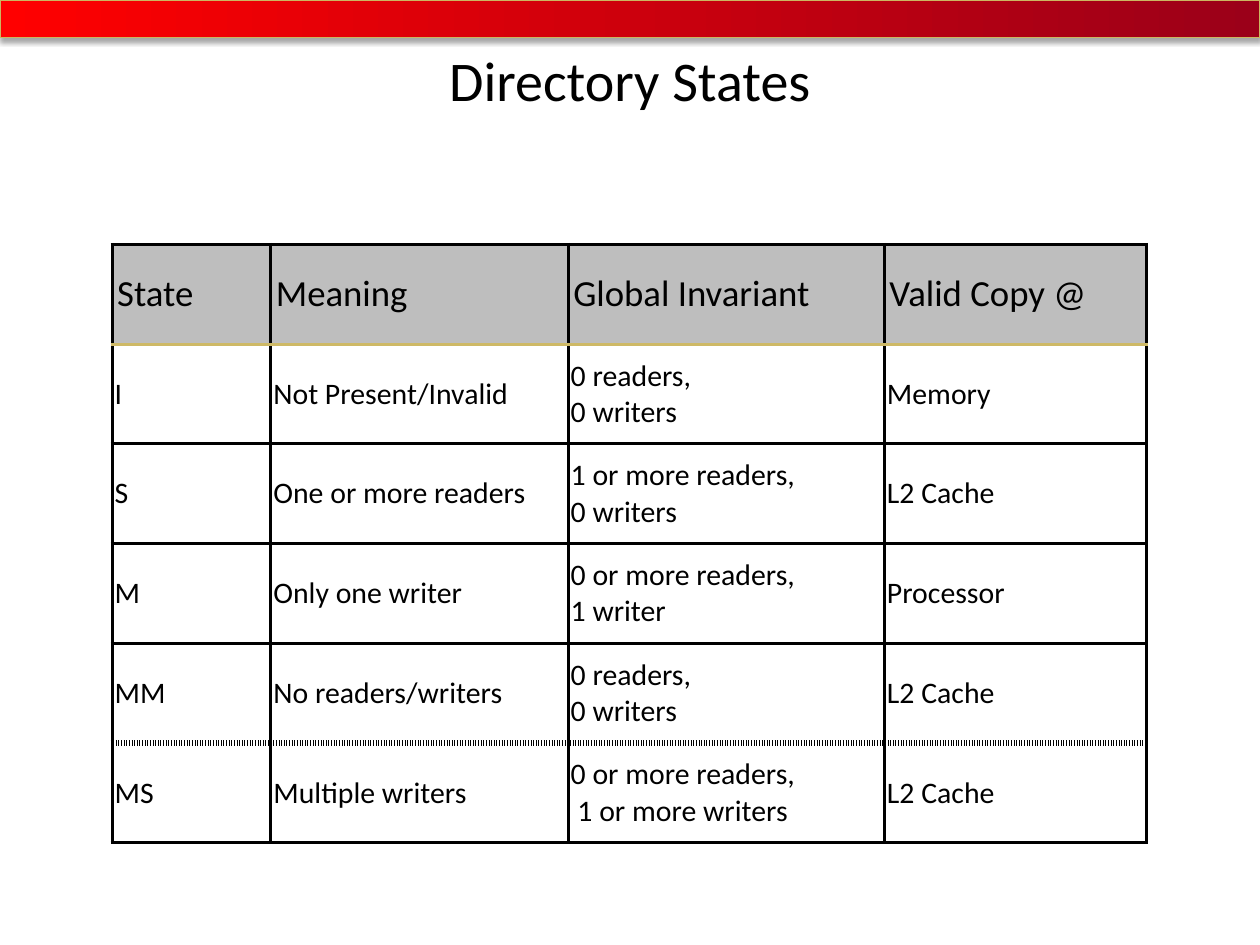
from dataclasses import dataclass

from lxml import etree
from pptx import Presentation
from pptx import util as u
from pptx.dml.color import RGBColor
from pptx.enum import shapes, text
from pptx.oxml import parse_xml
from pptx.oxml.ns import nsdecls, qn


@dataclass(frozen=True)
class Theme:
    font: str = "Calibri"
    ink: str = "000000"
    gold: str = "CEB966"
    banner_line: str = "CCB661"
    banner_start: str = "FF0000"
    banner_end: str = "9B0019"
    header_fill: str = "7F7F7F"
    title_size: int = 32
    header_size: int = 21
    body_size: int = 17


@dataclass(frozen=True)
class Border:
    color: str
    width: float = 2
    dash: str = "solid"


@dataclass(frozen=True)
class State:
    name: str
    meaning: str
    invariant: str
    valid_copy: str

    def cells(self) -> tuple[str, ...]:
        return self.name, self.meaning, self.invariant, self.valid_copy


THEME = Theme()
SOLID = Border(THEME.ink)
GOLD = Border(THEME.gold)
DOTTED = Border(THEME.ink, 4, "sysDot")

HEADER = State("State", "Meaning", "Global Invariant", "Valid Copy @")
STATES = [
    State("I", "Not Present/Invalid", "0 readers,\n0 writers", "Memory"),
    State("S", "One or more readers", "1 or more readers,\n0 writers", "L2 Cache"),
    State("M", "Only one writer", "0 or more readers,\n1 writer", "Processor"),
    State("MM", "No readers/writers", "0 readers,\n0 writers", "L2 Cache"),
    State("MS", "Multiple writers", "0 or more readers,\n 1 or more writers", "L2 Cache"),
]
ROW_EDGES = [SOLID, GOLD, SOLID, SOLID, SOLID, DOTTED, SOLID]
COLUMN_WIDTHS = [1.26, 2.36, 2.51, 2.08]
ROW_HEIGHT = 4.75 / (len(STATES) + 1)


def format_runs(tf, size: float) -> None:
    for p in tf.paragraphs:
        for r in p.runs:
            r.font.name = THEME.font
            r.font.size = u.Pt(size)
            r.font.bold = False
            r.font.color.rgb = RGBColor.from_string(THEME.ink)


def set_borders(cell, top: Border, bottom: Border) -> None:
    sides = {"lnL": SOLID, "lnR": SOLID, "lnT": top, "lnB": bottom}
    tc_pr = cell._tc.get_or_add_tcPr()
    for i, (side, border) in enumerate(sides.items()):
        tc_pr.insert(i, parse_xml(
            f'<a:{side} {nsdecls("a")} w="{u.Pt(border.width)}">'
            f'<a:solidFill><a:srgbClr val="{border.color}"/></a:solidFill>'
            f'<a:prstDash val="{border.dash}"/></a:{side}>'))


def add_banner(s) -> None:
    sp = s.shapes.add_shape(shapes.MSO_SHAPE.RECTANGLE, 0, 0, u.Inches(10), u.Inches(0.3))
    sp.fill.gradient()
    sp.fill.gradient_angle = 0
    for stop, color in zip(sp.fill.gradient_stops, (THEME.banner_start, THEME.banner_end)):
        stop.color.rgb = RGBColor.from_string(color)
    sp.line.color.rgb = RGBColor.from_string(THEME.banner_line)
    sp.line.width = u.Pt(0.75)
    sp.shadow.inherit = False
    effects = sp._element.spPr.find(qn("a:effectLst"))
    effects.append(parse_xml(
        f'<a:outerShdw {nsdecls("a")} blurRad="{u.Pt(3.1)}" dist="{u.Pt(1.8)}" '
        'dir="5400000" rotWithShape="0"><a:srgbClr val="000000">'
        '<a:alpha val="35000"/></a:srgbClr></a:outerShdw>'))


def add_title(s, title: str) -> None:
    sp = s.shapes.add_textbox(u.Inches(0.5), u.Inches(0.3), u.Inches(9), u.Inches(0.66))
    tf = sp.text_frame
    tf.word_wrap = True
    tf.vertical_anchor = text.MSO_ANCHOR.MIDDLE
    tf.text = title
    tf.paragraphs[0].alignment = text.PP_ALIGN.CENTER
    format_runs(tf, THEME.title_size)


def fill_cell(cell, content: str, is_header: bool) -> None:
    margin = u.Inches(0.04 if is_header else 0.02)
    cell.margin_left = cell.margin_right = margin
    cell.margin_top = cell.margin_bottom = margin
    cell.vertical_anchor = text.MSO_ANCHOR.MIDDLE
    cell.text_frame.text = content
    format_runs(cell.text_frame, THEME.header_size if is_header else THEME.body_size)
    if is_header:
        cell.fill.solid()
        cell.fill.fore_color.rgb = RGBColor.from_string(THEME.header_fill)
        color = cell._tc.tcPr.find(".//" + qn("a:srgbClr"))
        etree.SubElement(color, qn("a:alpha"), val="50000")
    else:
        cell.fill.background()


def add_state_table(s, rows: list[State]) -> None:
    frame = s.shapes.add_table(
        len(rows), len(COLUMN_WIDTHS), u.Inches(0.89), u.Inches(1.94),
        u.Inches(sum(COLUMN_WIDTHS)), u.Inches(ROW_HEIGHT * len(rows)))
    table = frame.table
    table.first_row = False
    table.horz_banding = False
    for column, width in zip(table.columns, COLUMN_WIDTHS):
        column.width = u.Inches(width)
    for i, state in enumerate(rows):
        table.rows[i].height = u.Inches(ROW_HEIGHT)
        for cell, content in zip(table.rows[i].cells, state.cells()):
            fill_cell(cell, content, is_header=i == 0)
            set_borders(cell, ROW_EDGES[i], ROW_EDGES[i + 1])


def main() -> None:
    prs = Presentation()
    prs.slide_width, prs.slide_height = u.Inches(10), u.Inches(7.5)
    s = prs.slides.add_slide(prs.slide_layouts[6])
    add_banner(s)
    add_title(s, "Directory States")
    add_state_table(s, [HEADER, *STATES])
    prs.save("out.pptx")


if __name__ == "__main__":
    main()
